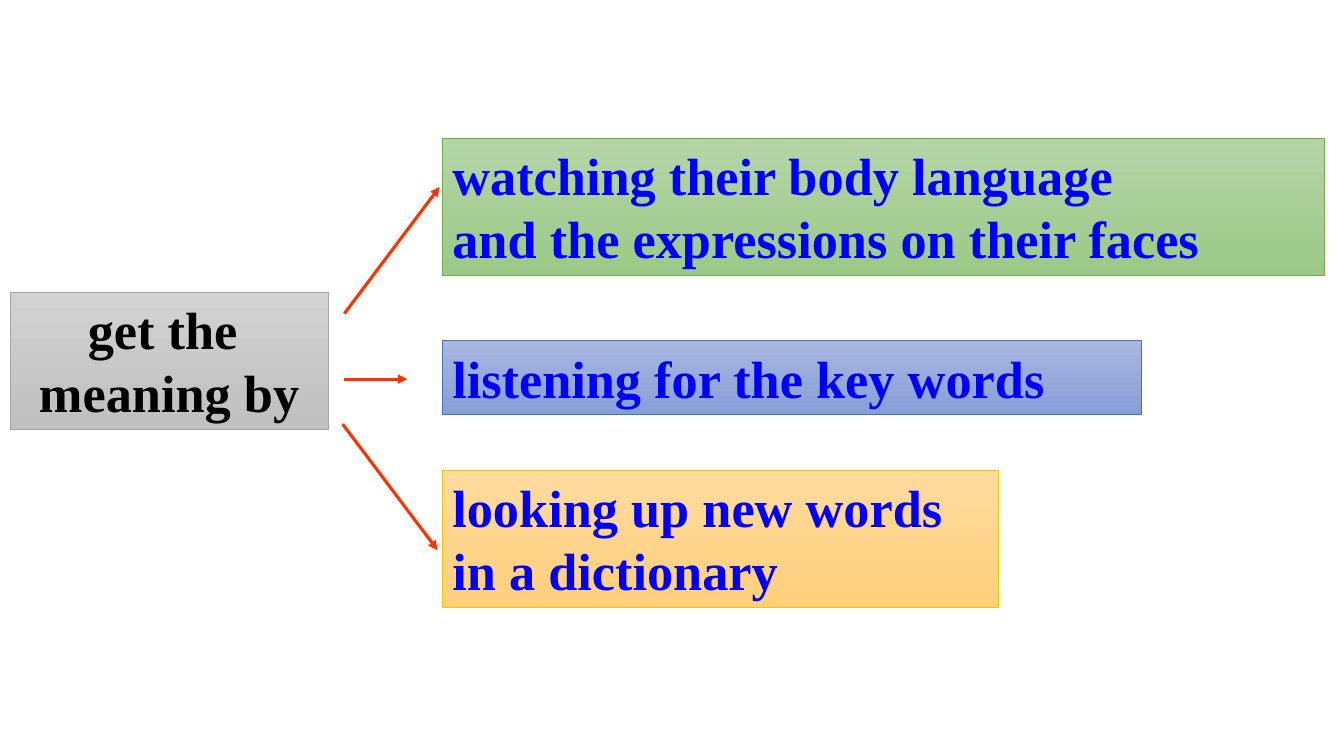
"""Build a slide that links one topic box to three ways of getting the meaning."""
from dataclasses import dataclass

from lxml import etree
from pptx import Presentation
from pptx.dml.color import RGBColor
from pptx.enum.shapes import MSO_CONNECTOR, MSO_SHAPE
from pptx.enum.text import MSO_ANCHOR, MSO_AUTO_SIZE, PP_ALIGN
from pptx.oxml.ns import qn
from pptx.slide import Slide
from pptx.util import Pt

RECTANGLE = MSO_SHAPE.RECTANGLE
STRAIGHT = MSO_CONNECTOR.STRAIGHT
LEFT, CENTER = PP_ALIGN.LEFT, PP_ALIGN.CENTER

COLORS = {
    "gray_top": "D2D2D2", "gray_bottom": "C0C0C0", "gray_line": "A5A5A5",
    "green_top": "B5D5A7", "green_bottom": "9CC987", "green_line": "70AD47",
    "blue_top": "A8B7DF", "blue_bottom": "889ED7", "blue_line": "4472C4",
    "gold_top": "FFDB9E", "gold_bottom": "FFD07C", "gold_line": "FFC000",
    "topic_text": "000000", "answer_text": "0000FF", "arrow": "FF3300",
}
FONT_FORMAT = {"name": "Times New Roman", "size": Pt(37.4), "bold": True}
FRAME_FORMAT = {
    "word_wrap": True,
    "auto_size": MSO_AUTO_SIZE.SHAPE_TO_FIT_TEXT,
    "vertical_anchor": MSO_ANCHOR.TOP,
}
ANSWER_LEFT = 316
ONE_LINE, TWO_LINES = 52.6, 98


@dataclass(frozen=True)
class Box:
    left: float
    top: float
    width: float
    height: float
    palette: str
    lines: tuple[str, ...]
    text_color: str = "answer_text"
    alignment: PP_ALIGN = LEFT


@dataclass(frozen=True)
class Arrow:
    start: tuple[float, float]
    end: tuple[float, float]


BOXES = (
    Box(7.2, 208.8, 227.5, TWO_LINES, "gray", ("get the ", "meaning by"),
        "topic_text", CENTER),
    Box(ANSWER_LEFT, 98.6, 630, TWO_LINES, "green",
        ("watching their body language", "and the expressions on their faces")),
    Box(ANSWER_LEFT, 243.4, 499, ONE_LINE, "blue",
        ("listening for the key words",)),
    Box(ANSWER_LEFT, 336.2, 397.4, TWO_LINES, "gold",
        ("looking up new words", "in a dictionary")),
)
ARROWS = (
    Arrow((246, 224), (314, 133.5)),
    Arrow((246, 270.8), (291, 270.8)),
    Arrow((244.8, 303), (312.6, 393)),
)


def color(name: str) -> RGBColor:
    return RGBColor.from_string(COLORS[name])


def apply_format(target: object, values: dict[str, object]) -> None:
    for name, value in values.items():
        setattr(target, name, value)


def draw_box(slide: Slide, box: Box) -> None:
    shape = slide.shapes.add_shape(
        RECTANGLE, Pt(box.left), Pt(box.top), Pt(box.width), Pt(box.height))
    shape.shadow.inherit = False
    shape.fill.gradient()
    shape.fill.gradient_angle = 270
    for stop, position, side in zip(
            shape.fill.gradient_stops, (0, 1), ("top", "bottom")):
        stop.position = position
        stop.color.rgb = color(f"{box.palette}_{side}")
    shape.line.color.rgb = color(f"{box.palette}_line")
    shape.line.width = Pt(0.5)

    frame = shape.text_frame
    frame.text = "\n".join(box.lines)
    apply_format(frame, FRAME_FORMAT)
    for paragraph in frame.paragraphs:
        paragraph.alignment = box.alignment
        for run in paragraph.runs:
            apply_format(run.font, FONT_FORMAT)
            run.font.color.rgb = color(box.text_color)


def draw_arrow(slide: Slide, arrow: Arrow) -> None:
    connector = slide.shapes.add_connector(
        STRAIGHT, *(Pt(value) for value in arrow.start + arrow.end))
    connector.line.color.rgb = color("arrow")
    connector.line.width = Pt(2.25)
    properties = connector._element.spPr
    etree.SubElement(properties.find(qn("a:ln")), qn("a:tailEnd"), type="triangle")
    etree.SubElement(properties, qn("a:effectLst"))


def main() -> None:
    presentation = Presentation()
    presentation.slide_width = Pt(960)
    presentation.slide_height = Pt(540)
    slide = presentation.slides.add_slide(presentation.slide_layouts[6])
    for box in BOXES:
        draw_box(slide, box)
    for arrow in ARROWS:
        draw_arrow(slide, arrow)
    presentation.save("out.pptx")


if __name__ == "__main__":
    main()
